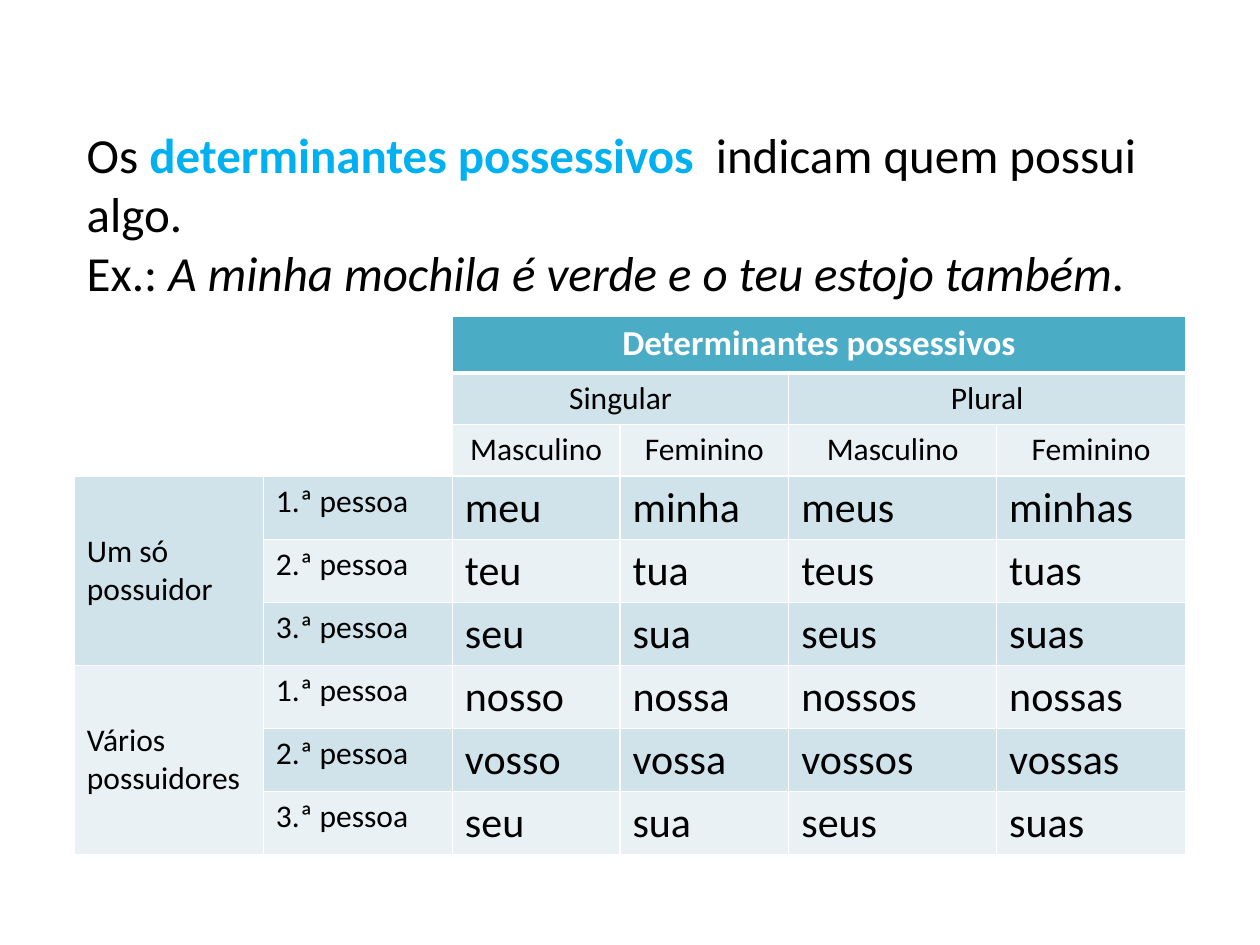
from lxml import etree
from pptx import Presentation
from pptx.dml.color import RGBColor
from pptx.enum.text import MSO_ANCHOR, PP_ALIGN
from pptx.oxml.ns import qn
from pptx.util import Inches, Pt

CENTER, LEFT = PP_ALIGN.CENTER, PP_ALIGN.LEFT
TOP, MIDDLE = MSO_ANCHOR.TOP, MSO_ANCHOR.MIDDLE
BLACK = RGBColor(0x00, 0x00, 0x00)
WHITE = RGBColor(0xFF, 0xFF, 0xFF)
SKY = RGBColor(0x00, 0xB0, 0xF0)
TEAL = RGBColor(0x4B, 0xAC, 0xC6)
BANDS = (RGBColor(0xD0, 0xE3, 0xEA), RGBColor(0xE9, 0xF1, 0xF5))

COLUMN_WIDTHS = (1.5, 1.5, 1.33, 1.34, 1.65, 1.5)
ROW_HEIGHTS = (0.45, 0.41, 0.41) + (0.5,) * 6
HEADER_ROWS = 3
LABEL_COLUMNS = 2
PERSONS = ("1.ª pessoa", "2.ª pessoa", "3.ª pessoa")
POSSESSORS = {
    "Um só possuidor": (
        ("meu", "minha", "meus", "minhas"),
        ("teu", "tua", "teus", "tuas"),
        ("seu", "sua", "seus", "suas"),
    ),
    "Vários possuidores": (
        ("nosso", "nossa", "nossos", "nossas"),
        ("vosso", "vossa", "vossos", "vossas"),
        ("seu", "sua", "seus", "suas"),
    ),
}


def add_text(paragraph, text, size=18, color=BLACK, bold=False, italic=False, align=LEFT):
    paragraph.alignment = align
    run = paragraph.add_run()
    run.text = text
    font = run.font
    font.name, font.size = "Calibri", Pt(size)
    font.bold, font.italic = bold, italic
    font.color.rgb = color


def set_borders(cell, bottom_width):
    """Draw white cell edges; they must precede the fill in the cell properties."""
    properties = cell._tc.get_or_add_tcPr()
    widths = {"a:lnL": 1, "a:lnR": 1, "a:lnT": 1, "a:lnB": bottom_width}
    for position, (tag, width) in enumerate(widths.items()):
        line = etree.Element(qn(tag), w=str(int(Pt(width))))
        fill = etree.SubElement(line, qn("a:solidFill"))
        etree.SubElement(fill, qn("a:srgbClr"), val=str(WHITE))
        properties.insert(position, line)


def fill_cell(cell, text, background, anchor=TOP, **text_format):
    cell.fill.solid()
    cell.fill.fore_color.rgb = background
    cell.vertical_anchor = anchor
    add_text(cell.text_frame.paragraphs[0], text, **text_format)


def add_definition(slide, left, top, width, height):
    frame = slide.shapes.add_textbox(left, top, width, height).text_frame
    frame.word_wrap = True
    definition = frame.paragraphs[0]
    add_text(definition, "Os ", size=28)
    add_text(definition, "determinantes possessivos  ", size=28, color=SKY, bold=True)
    add_text(definition, "indicam quem possui algo.", size=28)
    example = frame.add_paragraph()
    add_text(example, "Ex.: ", size=28)
    add_text(example, "A minha mochila é verde e o teu estojo também", size=28, italic=True)
    add_text(example, ".", size=28)


def fill_header(table):
    title = table.cell(0, LABEL_COLUMNS)
    title.merge(table.cell(0, len(COLUMN_WIDTHS) - 1))
    fill_cell(title, "Determinantes possessivos", TEAL,
              size=20, color=WHITE, bold=True, align=CENTER)
    for index, number in enumerate(("Singular", "Plural")):
        column = LABEL_COLUMNS + 2 * index
        table.cell(1, column).merge(table.cell(1, column + 1))
        fill_cell(table.cell(1, column), number, BANDS[0], align=CENTER)
        for offset, gender in enumerate(("Masculino", "Feminino")):
            fill_cell(table.cell(2, column + offset), gender, BANDS[1], align=CENTER)


def fill_body(table):
    row = HEADER_ROWS
    for index, (possessor, forms_by_person) in enumerate(POSSESSORS.items()):
        label = table.cell(row, 0)
        label.merge(table.cell(row + len(PERSONS) - 1, 0))
        fill_cell(label, possessor, BANDS[index], anchor=MIDDLE)
        for person, forms in zip(PERSONS, forms_by_person):
            band = BANDS[(row - HEADER_ROWS) % 2]
            fill_cell(table.cell(row, 1), person, band)
            for column, form in enumerate(forms, LABEL_COLUMNS):
                fill_cell(table.cell(row, column), form, band, size=24)
            row += 1


def add_possessives_table(slide, left, top, width, height):
    table = slide.shapes.add_table(
        len(ROW_HEIGHTS), len(COLUMN_WIDTHS), left, top, width, height).table
    table.first_row = table.horz_banding = False
    for column, column_width in zip(table.columns, COLUMN_WIDTHS):
        column.width = Inches(column_width)
    for index, (row, row_height) in enumerate(zip(table.rows, ROW_HEIGHTS)):
        row.height = Inches(row_height)
        for cell in row.cells:
            cell.fill.background()
            set_borders(cell, bottom_width=3 if index == 0 else 1)
    fill_header(table)
    fill_body(table)


def main():
    presentation = Presentation()
    presentation.slide_width, presentation.slide_height = Inches(10), Inches(7.5)
    slide = presentation.slides.add_slide(presentation.slide_layouts[6])
    add_definition(slide, Inches(0.59), Inches(0.94), Inches(8.9), Inches(1.51))
    add_possessives_table(slide, Inches(0.59), Inches(2.51),
                          Inches(sum(COLUMN_WIDTHS)), Inches(sum(ROW_HEIGHTS)))
    presentation.save("out.pptx")


if __name__ == "__main__":
    main()
